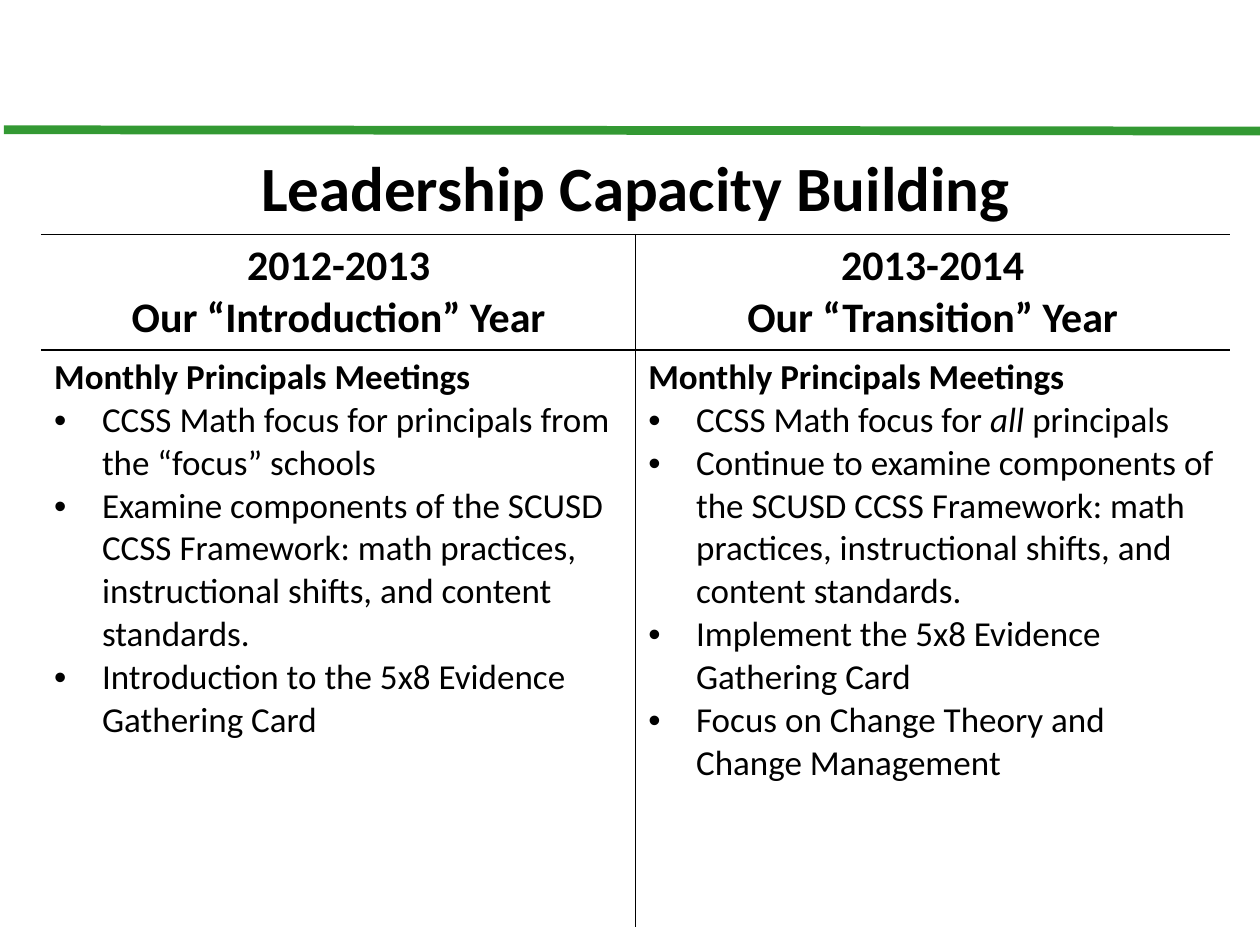
from lxml.etree import SubElement
from pptx import Presentation
from pptx.dml.color import RGBColor
from pptx.enum.shapes import MSO_CONNECTOR
from pptx.enum.text import PP_ALIGN
from pptx.oxml import parse_xml
from pptx.oxml.ns import nsdecls, qn
from pptx.util import Inches, Pt

COLORS = {"rule": "339933", "text": "000000", "grid": "000000", "outer": "FFFFFF"}
TITLE = "Leadership Capacity Building"
MEETINGS = "Monthly Principals Meetings"
# Each bullet is a list of (text, italic) spans
YEARS = [
    {
        "heading": ["2012-2013", "Our “Introduction” Year"],
        "bullets": [
            [("CCSS Math focus for principals from the “focus” schools", False)],
            [("Examine components of the SCUSD CCSS Framework: math practices, "
              "instructional shifts, and content standards.", False)],
            [("Introduction to the 5x8 Evidence Gathering Card", False)],
        ],
    },
    {
        "heading": ["2013-2014", "Our “Transition” Year"],
        "bullets": [
            [("CCSS Math focus for ", False), ("all ", True), ("principals", False)],
            [("Continue to examine components of the SCUSD CCSS Framework: math "
              "practices, instructional shifts, and content standards.", False)],
            [("Implement the 5x8 Evidence Gathering Card", False)],
            [("Focus on Change Theory and Change Management", False)],
        ],
    },
]


def add_rule(page, left, top, right, bottom):
    rule = page.shapes.add_connector(MSO_CONNECTOR.STRAIGHT, left, top, right, bottom)
    rule.line.color.rgb = RGBColor.from_string(COLORS["rule"])
    rule.line.width = Pt(5)
    SubElement(rule._element.spPr, qn("a:effectLst"))


def set_borders(cell, **sides):
    """Clear the fill and draw the borders, given as L, R, T and B colours."""
    cell.fill.background()
    properties = cell._tc.get_or_add_tcPr()
    for position, side in enumerate("LRTB"):
        properties.insert(position, parse_xml(
            f'<a:ln{side} {nsdecls("a")} w="12700"><a:solidFill>'
            f'<a:srgbClr val="{COLORS[sides[side]]}"/></a:solidFill></a:ln{side}>'))


def add_paragraph(cell, spans, size, bold=True, align=PP_ALIGN.LEFT, bullet=False):
    frame = cell.text_frame
    para = frame.add_paragraph() if frame.text else frame.paragraphs[0]
    if bullet:
        properties = para._p.get_or_add_pPr()
        properties.set("marL", str(Inches(0.38)))
        properties.set("indent", str(-Inches(0.38)))
        SubElement(properties, qn("a:buFont"), typeface="Arial")
        SubElement(properties, qn("a:buChar"), char="•")
    para.alignment = align
    para.font.name = "Calibri"
    para.font.size = Pt(size)
    para.font.bold = bold
    para.font.color.rgb = RGBColor.from_string(COLORS["text"])
    for text, italic in spans:
        span = para.add_run()
        span.text = text
        # Set on the run too, so the table style cannot override it
        span.font.bold = bold
        if italic:
            span.font.italic = True


def add_year_table(page, left, top, width, height):
    table = page.shapes.add_table(3, len(YEARS), left, top, width, height).table
    table.first_row = False
    table.horz_banding = False
    for row, row_height in zip(table.rows, (0.52, 0.86, 4.59)):
        row.height = Inches(row_height)

    # Title row across both years
    title = table.cell(0, 0)
    title.merge(table.cell(0, len(YEARS) - 1))
    add_paragraph(title, [(TITLE, False)], 36, align=PP_ALIGN.CENTER)

    for column, year in enumerate(YEARS):
        left_edge = "outer" if column == 0 else "grid"
        right_edge = "outer" if column == len(YEARS) - 1 else "grid"
        set_borders(table.cell(0, column), L="outer", R="outer", T="outer", B="grid")

        # Year heading
        heading = table.cell(1, column)
        set_borders(heading, L=left_edge, R=right_edge, T="grid", B="grid")
        for line in year["heading"]:
            add_paragraph(heading, [(line, False)], 24, align=PP_ALIGN.CENTER)

        # Meeting topics
        topics = table.cell(2, column)
        set_borders(topics, L=left_edge, R=right_edge, T="grid", B="outer")
        add_paragraph(topics, [(MEETINGS, False)], 20)
        for spans in year["bullets"]:
            add_paragraph(topics, spans, 20, bold=False, bullet=True)


def main():
    deck = Presentation()
    deck.slide_width, deck.slide_height = Inches(10), Inches(7.5)
    page = deck.slides.add_slide(deck.slide_layouts[6])
    add_rule(page, Inches(0.03), Inches(1.03), Inches(10), Inches(1.04))
    add_year_table(page, Inches(0.33), Inches(1.15), Inches(9.43), Inches(6.19))
    deck.save("out.pptx")


if __name__ == "__main__":
    main()
